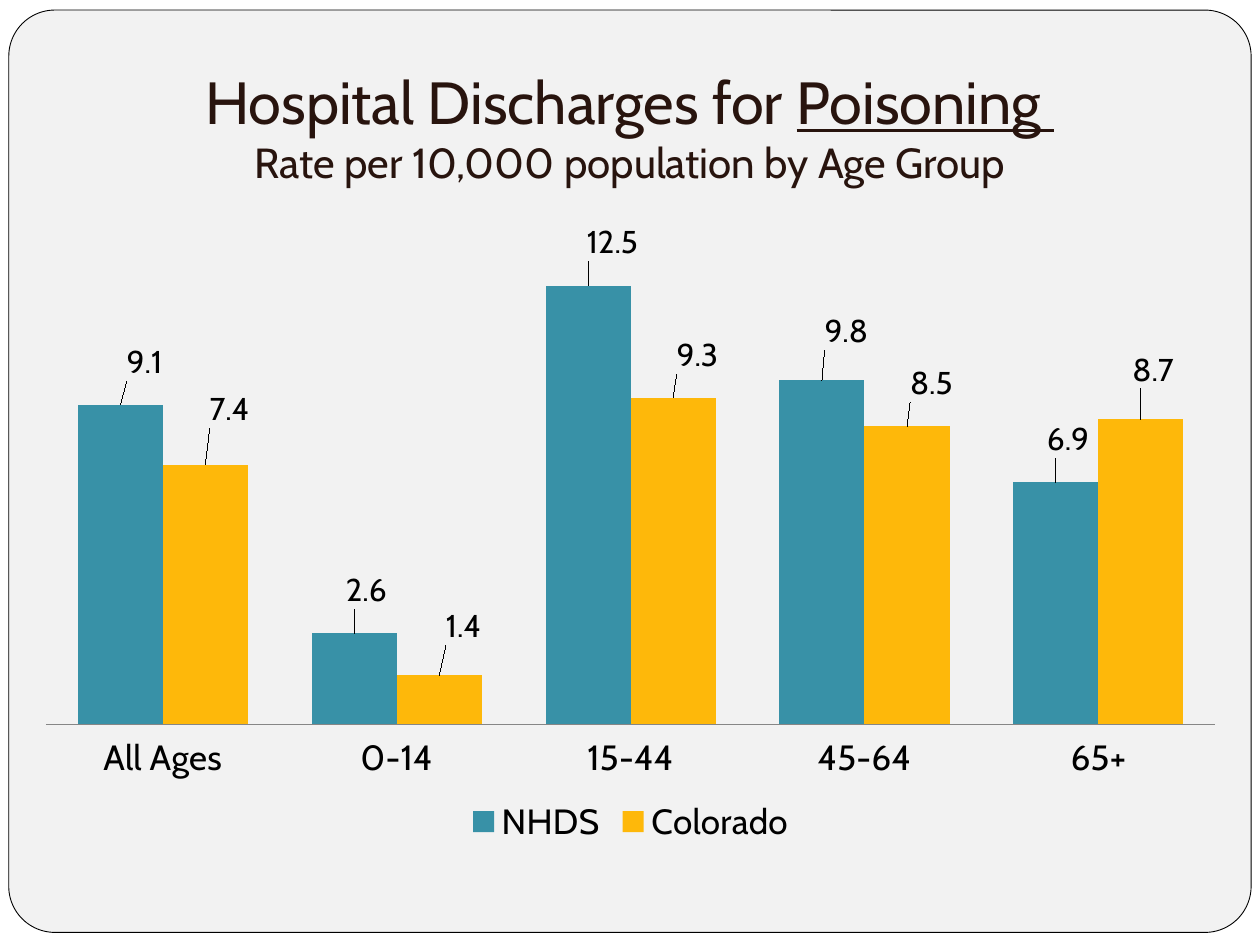
from lxml import etree
from pptx import Presentation
from pptx.chart.data import CategoryChartData
from pptx.dml.color import RGBColor
from pptx.enum.chart import (XL_CHART_TYPE, XL_LABEL_POSITION,
                             XL_LEGEND_POSITION, XL_TICK_LABEL_POSITION,
                             XL_TICK_MARK)
from pptx.enum.shapes import MSO_SHAPE
from pptx.enum.text import MSO_ANCHOR, PP_ALIGN
from pptx.oxml.ns import qn
from pptx.util import Inches, Pt

COLUMN = XL_CHART_TYPE.COLUMN_CLUSTERED
OUTSIDE = XL_LABEL_POSITION.OUTSIDE_END
BOTTOM = XL_LEGEND_POSITION.BOTTOM
NO_TICK = XL_TICK_MARK.NONE
LOW = XL_TICK_LABEL_POSITION.LOW
ROUND = MSO_SHAPE.ROUNDED_RECTANGLE
FONT = "Cabin"
PANEL, BLACK, BROWN = "F2F2F2", "000000", "28140E"

AGES = ["All Ages", "0-14", "15-44", "45-64", "65+"]
# Name, colour, rates, and label shifts as shares of the chart size
SERIES = [
    ("NHDS", "3891A7", [9.1, 2.6, 12.5, 9.8, 6.9],
     [(0.02, -0.03), (0.01, -0.03), (0.02, -0.03), (0.02, -0.04), (0.01, -0.03)]),
    ("Colorado", "FEB80A", [7.4, 1.4, 9.3, 8.5, 8.7],
     [(0.02, -0.05), (0.02, -0.04), (0.02, -0.03), (0.02, -0.03), (0.01, -0.04)]),
]


def color(code):
    return RGBColor.from_string(code)


def style(font, size, code=BLACK):
    font.name = FONT
    font.size = Pt(size)
    font.bold = False
    font.color.rgb = color(code)


def layout(**parts):
    """Build a manual chart layout from its named values."""
    root = etree.Element(qn("c:layout"))
    manual = etree.SubElement(root, qn("c:manualLayout"))
    for name, value in parts.items():
        etree.SubElement(manual, qn("c:" + name)).set("val", str(value))
    return root


def add_panel(slide, x, y, w, h):
    panel = slide.shapes.add_shape(ROUND, x, y, w, h)
    panel.shadow.inherit = False
    panel.adjustments[0] = 0.05
    panel.fill.solid()
    panel.fill.fore_color.rgb = color(PANEL)
    panel.line.color.rgb = color(BLACK)
    panel.line.width = Pt(0.5)


def add_title(slide, x, y, w, h):
    frame = slide.shapes.add_textbox(x, y, w, h).text_frame
    frame.word_wrap = True
    frame.vertical_anchor = MSO_ANCHOR.BOTTOM
    frame.margin_bottom = Inches(0.1)
    para = frame.paragraphs[0]
    para.alignment = PP_ALIGN.CENTER
    for text, size, under in (("Hospital Discharges for ", 34, False),
                              ("Poisoning ", 34, True),
                              ("Rate per 10,000 population by Age Group", 24, False)):
        if size == 24:
            para.add_line_break()
        run = para.add_run()
        run.text = text
        style(run.font, size, BROWN)
        run.font.underline = under


def add_bars(slide, x, y, w, h):
    data = CategoryChartData(number_format="#,##0.0")
    data.categories = AGES
    for name, _, rates, _ in SERIES:
        data.add_series(name, rates)
    chart = slide.shapes.add_chart(COLUMN, x, y, w, h, data).chart
    chart.has_title = False
    style(chart.font, 18)

    # Legend and axes
    chart.has_legend = True
    chart.legend.position = BOTTOM
    chart.legend.include_in_layout = False
    style(chart.legend.font, 20)
    ages, rate = chart.category_axis, chart.value_axis
    ages.major_tick_mark = NO_TICK
    ages.tick_label_position = LOW
    ages.format.line.color.rgb = color("868686")
    style(ages.tick_labels.font, 20)
    rate.visible = False
    rate.has_major_gridlines = False
    rate.minimum_scale, rate.maximum_scale = 0, 14

    # Plot area
    area = chart.plots[0]
    area.gap_width = 75
    area.overlap = 0
    area.vary_by_categories = False
    plot = chart.element.find(".//" + qn("c:plotArea"))
    for old in plot.findall(qn("c:layout")):
        plot.remove(old)
    plot.insert(0, layout(layoutTarget="inner", xMode="edge", yMode="edge",
                          x=0.02, y=0.02, w=0.96, h=0.78))

    # Bars and their labels
    for bars, (_, code, _, shifts) in zip(area.series, SERIES):
        bars.format.fill.solid()
        bars.format.fill.fore_color.rgb = color(code)
        labels = bars.data_labels
        labels.show_value = True
        labels.number_format = "#,##0.0"
        labels.number_format_is_linked = False
        labels.position = OUTSIDE
        style(labels.font, 18)
        for i, (dx, dy) in enumerate(shifts):
            label = bars.points[i].data_label
            label.position = OUTSIDE
            style(label.font, 18)
        tags = labels._element.findall(qn("c:dLbl"))
        for tag, (dx, dy) in zip(tags, shifts):
            tag.insert(1, layout(x=dx, y=dy))


def main():
    deck = Presentation()
    deck.slide_width, deck.slide_height = Inches(10), Inches(7.5)
    slide = deck.slides.add_slide(deck.slide_layouts[6])
    slide.background.fill.solid()
    slide.background.fill.fore_color.rgb = color("FFFFFF")
    add_panel(slide, Inches(0.07), Inches(0.08), Inches(9.86), Inches(7.32))
    add_title(slide, Inches(0.75), Inches(0.33), Inches(8.5), Inches(1.25))
    add_bars(slide, Inches(0.17), Inches(1.75), Inches(9.67), Inches(5))
    deck.save("out.pptx")


if __name__ == "__main__":
    main()
